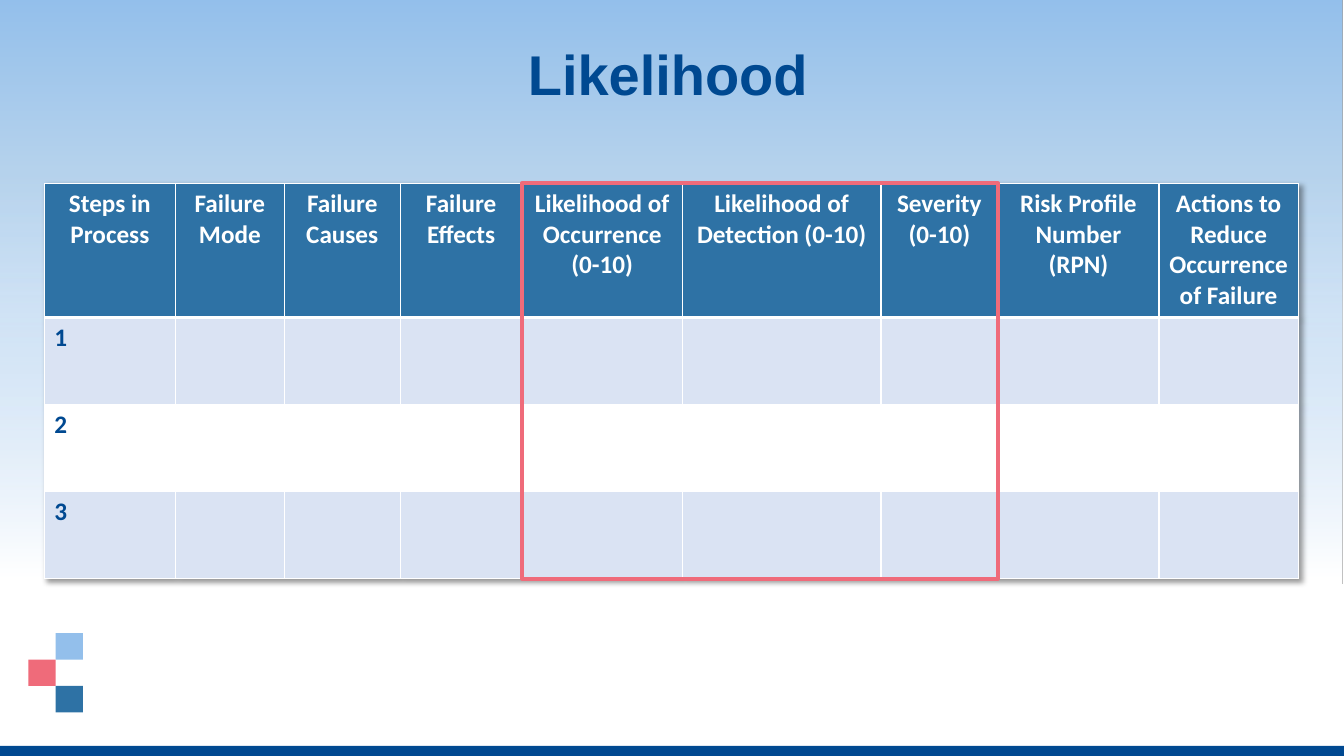
from lxml import etree
from pptx import Presentation, oxml
from pptx.dml.color import RGBColor
from pptx.enum import shapes, text
from pptx.oxml.ns import nsdecls, qn
from pptx.util import Pt

WIDTH, HEIGHT = 960, 540
TITLE = "Likelihood"
COLUMNS = [
    ("Steps in Process", 93.6),
    ("Failure Mode", 77.8),
    ("Failure Causes", 82.8),
    ("Failure Effects", 87.1),
    ("Likelihood of Occurrence (0-10)", 114.5),
    ("Likelihood of Detection (0-10)", 141.8),
    ("Severity (0-10)", 83.5),
    ("Risk Profile Number (RPN)", 115.2),
    ("Actions to Reduce Occurrence of Failure", 99.4),
]
STEPS = ["1", "2", "3"]
FRAMED = slice(4, 7)
TABLE_LEFT, TABLE_TOP = 31.7, 131
HEADER_HEIGHT, STEP_HEIGHT = 95.8, 62.2
NAVY, BLUE, SKY, CORAL, WHITE, PALE = (
    "004991", "2E72A5", "93BFEB", "EF6B7A", "FFFFFF", "DAE3F3")
SKY_STOPS = [(0, SKY, 100), (29, "B5D2EC", 100), (54, "BCD7F2", 69), (99, WHITE, 100)]
SQUARE_WIDTH, SQUARE_HEIGHT = 19.5, 18.9
SQUARES = [(1, 0, SKY), (0, 1, CORAL), (1, 2, BLUE)]  # column, row, colour


def colour(value):
    return RGBColor.from_string(value)


def add_box(slide, left, top, width, height, fill=None, line=None):
    box = slide.shapes.add_shape(
        shapes.MSO_SHAPE.RECTANGLE, Pt(left), Pt(top), Pt(width), Pt(height))
    box.shadow.inherit = False
    if fill:
        box.fill.solid()
        box.fill.fore_color.rgb = colour(fill)
    else:
        box.fill.background()
    if line:
        box.line.color.rgb = colour(line)
        box.line.width = Pt(3)
    else:
        box.line.fill.background()
    return box


def write(frame, words, size=18, font="Calibri", ink=NAVY, align=text.PP_ALIGN.LEFT):
    para = frame.paragraphs[0]
    para.alignment = align
    span = para.add_run()
    span.text = words
    span.font.size = Pt(size)
    span.font.name = font
    span.font.bold = True
    span.font.color.rgb = colour(ink)
    return para


def fade(box, stops):
    """Fill a box with a vertical gradient of (position, colour, opacity) stops."""
    marks = "".join(
        f'<a:gs pos="{place * 1000}"><a:srgbClr val="{value}">'
        f'<a:alpha val="{opacity * 1000}"/></a:srgbClr></a:gs>'
        for place, value, opacity in stops)
    gradient = oxml.parse_xml(
        f'<a:gradFill {nsdecls("a")} rotWithShape="1"><a:gsLst>{marks}</a:gsLst>'
        '<a:lin ang="5400000" scaled="0"/></a:gradFill>')
    properties = box.element.spPr
    properties.replace(properties.find(qn("a:solidFill")), gradient)


def set_borders(cell, bottom):
    properties = cell._tc.get_or_add_tcPr()
    edges = [("lnL", 1), ("lnR", 1), ("lnT", 1), ("lnB", bottom)]
    for index, (edge, width) in enumerate(edges):
        line = etree.Element(qn(f"a:{edge}"), w=str(Pt(width)))
        fill = etree.SubElement(line, qn("a:solidFill"))
        etree.SubElement(fill, qn("a:srgbClr"), val=WHITE)
        properties.insert(index, line)


def add_table_shadow(table):
    table._tbl.tblPr.insert(0, oxml.parse_xml(
        f'<a:effectLst {nsdecls("a")}><a:outerShdw blurRad="50800" dist="38100" '
        'dir="2700000" algn="tl" rotWithShape="0"><a:srgbClr val="000000">'
        '<a:alpha val="40000"/></a:srgbClr></a:outerShdw></a:effectLst>'))


def add_backdrop(slide):
    sky = add_box(slide, 0, 0, WIDTH, 417, fill=WHITE)
    fade(sky, SKY_STOPS)
    add_box(slide, 0, 532.8, WIDTH, HEIGHT - 532.8, fill=NAVY)
    for column, row, fill in SQUARES:
        add_box(slide, 20.2 + column * SQUARE_WIDTH, 452.2 + row * SQUARE_HEIGHT,
                SQUARE_WIDTH, SQUARE_HEIGHT, fill=fill)


def add_title(slide):
    title = slide.shapes.title
    slide.shapes.element.append(title.element)  # bring in front of the backdrop
    title.left, title.top, title.width, title.height = Pt(39.6), Pt(30.2), Pt(874.8), Pt(59.8)
    frame = title.text_frame
    frame.auto_size = text.MSO_AUTO_SIZE.NONE
    frame.vertical_anchor = text.MSO_ANCHOR.TOP
    para = write(frame, TITLE, size=40, font="Arial", align=text.PP_ALIGN.CENTER)
    para.line_spacing = 0.9


def add_risk_table(slide):
    widths = [width for _, width in COLUMNS]
    heights = [HEADER_HEIGHT] + [STEP_HEIGHT] * len(STEPS)
    table = slide.shapes.add_table(
        len(heights), len(widths), Pt(TABLE_LEFT), Pt(TABLE_TOP),
        Pt(sum(widths)), Pt(sum(heights))).table
    for column, width in zip(table.columns, widths):
        column.width = Pt(width)
    for index, (row, height) in enumerate(zip(table.rows, heights)):
        row.height = Pt(height)
        for cell in row.cells:
            cell.fill.solid()
            cell.fill.fore_color.rgb = colour(
                BLUE if index == 0 else PALE if index % 2 else WHITE)
            set_borders(cell, bottom=1 if index else 3)
    for index, (heading, _) in enumerate(COLUMNS):
        write(table.cell(0, index).text_frame, heading, ink=WHITE, align=text.PP_ALIGN.CENTER)
    for index, step in enumerate(STEPS, start=1):
        write(table.cell(index, 0).text_frame, step)
    add_table_shadow(table)
    add_box(slide, TABLE_LEFT + sum(widths[:FRAMED.start]), TABLE_TOP,
            sum(widths[FRAMED]), sum(heights), line=CORAL)


def main():
    deck = Presentation()
    deck.slide_width, deck.slide_height = Pt(WIDTH), Pt(HEIGHT)
    slide = deck.slides.add_slide(deck.slide_layouts[5])
    add_backdrop(slide)
    add_title(slide)
    add_risk_table(slide)
    deck.save("out.pptx")


if __name__ == "__main__":
    main()
